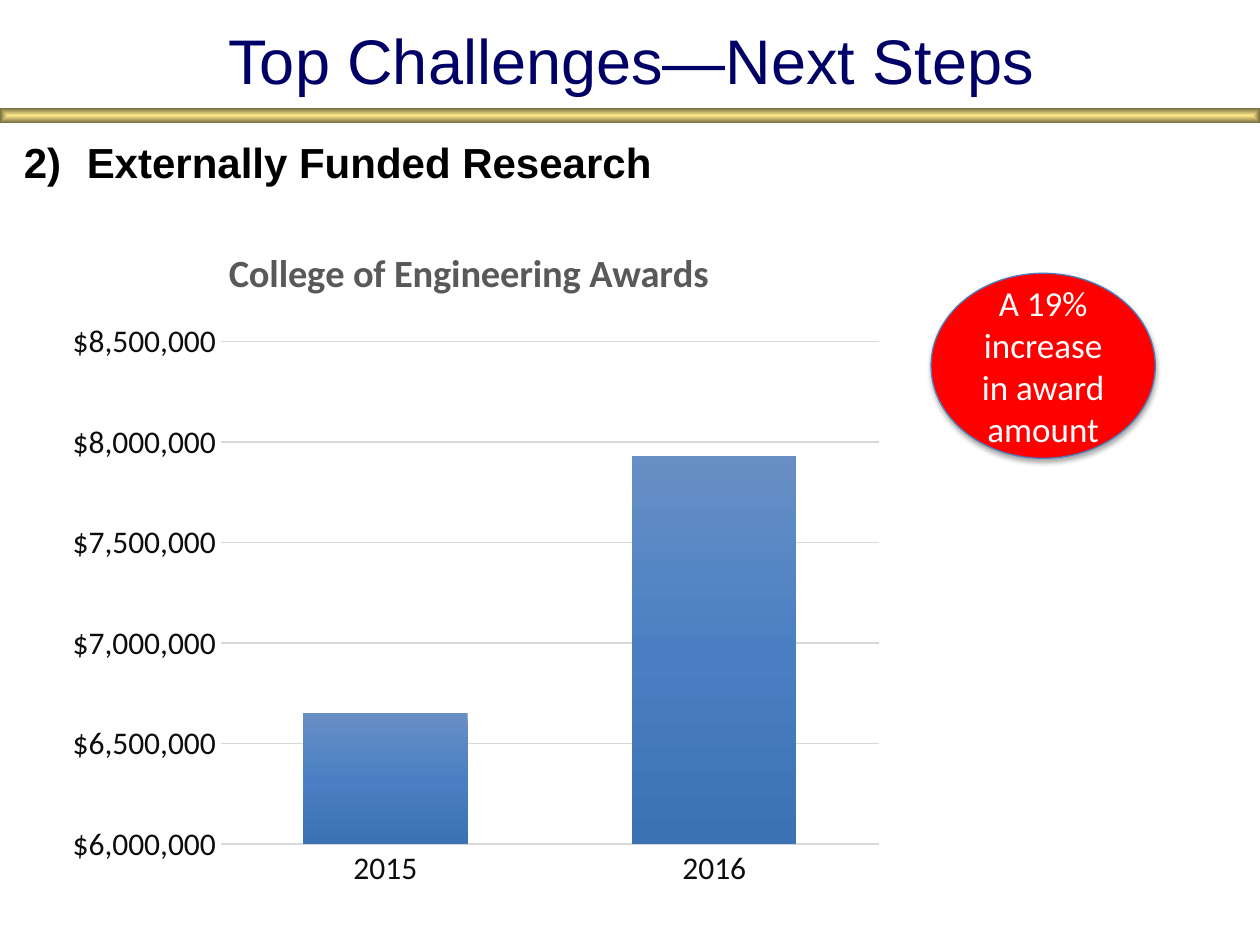
from lxml import etree
from pptx import Presentation
from pptx.chart.data import CategoryChartData
from pptx.dml.color import RGBColor
from pptx.enum import chart as ch, shapes, text
from pptx.oxml.ns import qn
from pptx.util import Cm, Pt

NAVY = RGBColor(0x00, 0x00, 0x66)
BLACK = RGBColor(0x00, 0x00, 0x00)
WHITE = RGBColor(0xFF, 0xFF, 0xFF)
RED = RGBColor(0xFF, 0x00, 0x00)
BLUE = RGBColor(0x4B, 0x7E, 0xBC)
GREY = RGBColor(0x59, 0x59, 0x59)
LABEL = RGBColor(0x0D, 0x0D, 0x0D)
GRID = RGBColor(0xD9, 0xD9, 0xD9)
GOLD, OLIVE = RGBColor(0xFF, 0xE9, 0x8B), RGBColor(0x76, 0x6C, 0x40)
BAR_BLUES = [RGBColor(0x68, 0x8F, 0xC5), RGBColor(0x4A, 0x80, 0xC3),
             RGBColor(0x3B, 0x72, 0xB3)]


def set_font(font, color, **values):
    font.color.rgb = color
    for name, value in values.items():
        setattr(font, name, value)


def sub(parent, tag, **attrs):
    return etree.SubElement(parent, qn(tag), {k: str(v) for k, v in attrs.items()})


def set_gradient(fill, element, colors, angle=None):
    """Swap a solid fill for evenly spaced stops, linear or from the centre."""
    fill.solid()
    solid = element.find(".//" + qn("a:solidFill"))
    grad = etree.Element(qn("a:gradFill"), rotWithShape="1")
    stops = sub(grad, "a:gsLst")
    for i, color in enumerate(colors):
        stop = sub(stops, "a:gs", pos=100000 * i // (len(colors) - 1))
        sub(stop, "a:srgbClr", val=color)
    if angle is None:
        centre = sub(grad, "a:path", path="shape")
        sub(centre, "a:fillToRect", l=50000, t=50000, r=50000, b=50000)
    else:
        sub(grad, "a:lin", ang=angle * 60000, scaled=0)
    solid.getparent().replace(solid, grad)


def add_title(s, title):
    sp = s.shapes.title
    sp.left, sp.top, sp.width, sp.height = Cm(2), Cm(0.3), Cm(21.45), Cm(1.8)
    tf = sp.text_frame
    tf.text = title
    tf.vertical_anchor = text.MSO_ANCHOR.MIDDLE
    p = tf.paragraphs[0]
    p.alignment = text.PP_ALIGN.CENTER
    set_font(p.runs[0].font, NAVY, name="Arial", size=Pt(36))


def add_band(s):
    sp = s.shapes.add_shape(shapes.MSO_SHAPE.RECTANGLE, 0, Cm(2.18), Cm(25.4), Cm(0.3))
    sp.shadow.inherit = False
    sp.line.fill.background()
    set_gradient(sp.fill, sp.element.spPr, [GOLD, OLIVE])


def add_numbered_heading(s, heading, number):
    tf = s.shapes.add_textbox(Cm(0.23), Cm(2.62), Cm(24.9), Cm(1.25)).text_frame
    tf.word_wrap = True
    p = tf.paragraphs[0]
    pPr = p._p.get_or_add_pPr()
    pPr.set("marL", str(Cm(1.27)))
    pPr.set("indent", str(-Cm(1.27)))
    sub(pPr, "a:buFont", typeface="+mj-lt")
    sub(pPr, "a:buAutoNum", type="arabicParenR", startAt=number)
    r = p.add_run()
    r.text = heading
    set_font(r.font, BLACK, name="Arial", size=Pt(24), bold=True)


def set_plot_area(chart, x, y, w, h):
    plot_area = chart._chartSpace.chart.plotArea
    for old in plot_area.findall(qn("c:layout")):
        plot_area.remove(old)
    layout = etree.Element(qn("c:layout"))
    manual = sub(layout, "c:manualLayout")
    for tag, val in [("layoutTarget", "inner"), ("xMode", "edge"), ("yMode", "edge"),
                     ("x", x), ("y", y), ("w", w), ("h", h)]:
        sub(manual, "c:" + tag, val=val)
    plot_area.insert(0, layout)


def add_awards_chart(s):
    data = CategoryChartData(number_format='"$"#,##0')
    data.categories = ["2015", "2016"]
    data.add_series("Awards", [6650000, 7930000])
    chart = s.shapes.add_chart(ch.XL_CHART_TYPE.COLUMN_CLUSTERED, Cm(0.84), Cm(4.42),
                               Cm(17.22), Cm(13.69), data).chart
    chart.has_legend = False
    set_font(chart.font, LABEL, name="Calibri", size=Pt(18))
    set_plot_area(chart, 0.21, 0.18, 0.77, 0.74)

    chart.has_title = True
    tf = chart.chart_title.text_frame
    tf.text = "College of Engineering Awards"
    set_font(tf.paragraphs[0].runs[0].font, GREY, name="Calibri", size=Pt(22), bold=True)

    # Axes
    cat, val = chart.category_axis, chart.value_axis
    for axis in (cat, val):
        axis.major_tick_mark = axis.minor_tick_mark = ch.XL_TICK_MARK.NONE
        set_font(axis.tick_labels.font, LABEL, name="Calibri", size=Pt(18))
    cat.format.line.color.rgb = GRID
    cat.format.line.width = Pt(1)
    val.minimum_scale, val.maximum_scale, val.major_unit = 6000000, 8500000, 500000
    val.format.line.fill.background()
    val.major_gridlines.format.line.color.rgb = GRID
    val.major_gridlines.format.line.width = Pt(0.75)

    # Bars
    plot = chart.plots[0]
    plot.gap_width, plot.overlap, plot.vary_by_categories = 100, -24, False
    bars = plot.series[0]
    set_gradient(bars.format.fill, bars._element, BAR_BLUES, angle=90)


def add_callout(s, message):
    sp = s.shapes.add_shape(shapes.MSO_SHAPE.OVAL, Cm(18.77), Cm(5.51), Cm(4.52), Cm(3.73))
    sp.fill.solid()
    sp.fill.fore_color.rgb = RED
    sp.line.color.rgb = BLUE
    sp.line.width = Pt(0.75)
    sp.shadow.inherit = False
    shadow = sub(sp.element.spPr.find(qn("a:effectLst")), "a:outerShdw",
                 blurRad=Pt(3.1), dist=Pt(1.8), dir=90 * 60000, rotWithShape=0)
    sub(sub(shadow, "a:srgbClr", val=BLACK), "a:alpha", val=35000)
    tf = sp.text_frame
    tf.word_wrap = True
    tf.vertical_anchor = text.MSO_ANCHOR.MIDDLE
    p = tf.paragraphs[0]
    p.alignment = text.PP_ALIGN.CENTER
    r = p.add_run()
    r.text = message
    set_font(r.font, WHITE, name="Calibri", size=Pt(20))


def main():
    prs = Presentation()
    prs.slide_width, prs.slide_height = Cm(25.4), Cm(19.05)
    s = prs.slides.add_slide(prs.slide_layouts[5])
    add_numbered_heading(s, "Externally Funded Research", 2)
    add_title(s, "Top Challenges—Next Steps")
    add_band(s)
    add_awards_chart(s)
    add_callout(s, "A 19% increase in award amount")
    prs.save("out.pptx")


if __name__ == "__main__":
    main()
